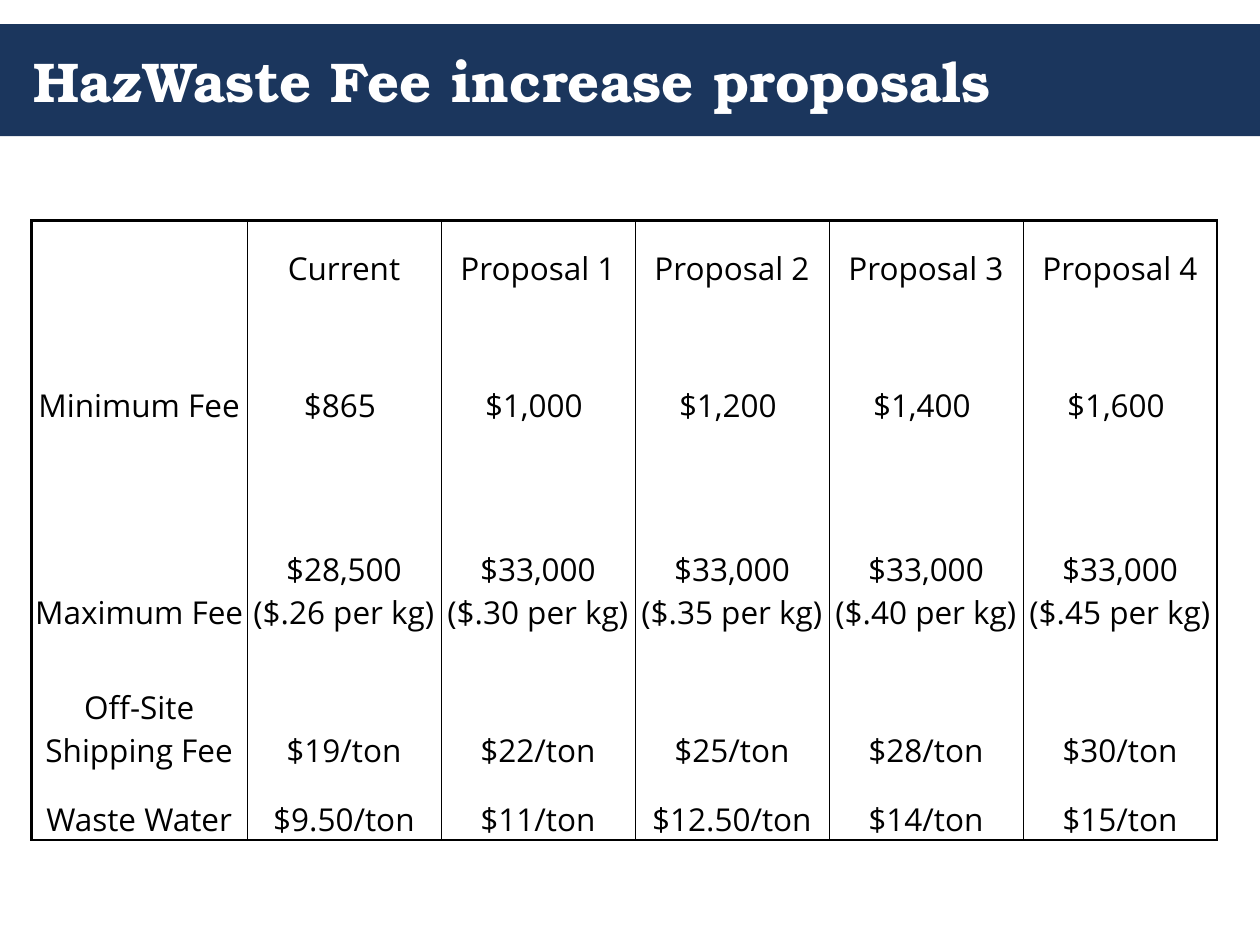
from lxml import etree
from pptx import Presentation
from pptx import util as u
from pptx.dml.color import RGBColor
from pptx.enum import shapes, text
from pptx.oxml import ns

NAVY, WHITE, BLACK = "1B365D", "FFFFFF", "000000"
HEADING_FONT, BODY_FONT = "TeX Gyre Bonum", "Open Sans"
OUTER, INNER = 1.5, 0.5
COLUMN_WIDTHS = [123.12] + [110.88] * 5
ROW_UNITS = [1, 2, 3, 2, 1]
FEES = [
    ["", "Current", "Proposal 1", "Proposal 2", "Proposal 3", "Proposal 4"],
    ["Minimum Fee", "$865 ", "$1,000 ", "$1,200 ", "$1,400 ", "$1,600 "],
    ["Maximum Fee", "$28,500 ($.26 per kg)", "$33,000 ($.30 per kg)",
     "$33,000 ($.35 per kg)", "$33,000 ($.40 per kg)", "$33,000 ($.45 per kg)"],
    ["Off-Site Shipping Fee", "$19/ton", "$22/ton", "$25/ton", "$28/ton", "$30/ton"],
    ["Waste Water", "$9.50/ton", "$11/ton", "$12.50/ton", "$14/ton", "$15/ton"],
]


def color(value):
    """Turn a hex string into a colour."""
    return RGBColor.from_string(value)


def write(frame, words, *, size, font, fill, bold=False, align=text.PP_ALIGN.LEFT):
    """Put one formatted paragraph into a text frame."""
    frame.word_wrap = True
    paragraph = frame.paragraphs[0]
    paragraph.alignment = align
    paragraph.font.size = u.Pt(size)
    run = paragraph.add_run()
    run.text = words
    run.font.size, run.font.name, run.font.bold = u.Pt(size), font, bold
    run.font.color.rgb = color(fill)


def set_borders(cell, widths):
    """Draw the cell's left, right, top and bottom edges; zero means none."""
    properties = cell._tc.get_or_add_tcPr()
    for place, (side, width) in enumerate(zip("LRTB", widths)):
        edge = etree.Element(ns.qn(f"a:ln{side}"), w=str(u.Pt(width)))
        if width:
            fill = etree.SubElement(edge, ns.qn("a:solidFill"))
            etree.SubElement(fill, ns.qn("a:srgbClr"), val=BLACK)
        else:
            etree.SubElement(edge, ns.qn("a:noFill"))
        properties.insert(place, edge)


def add_header(slide, left, top, width, height):
    """Add the navy band and the heading on it."""
    band = slide.shapes.add_shape(
        shapes.MSO_SHAPE.RECTANGLE, u.Pt(left), u.Pt(top), u.Pt(width), u.Pt(height))
    band.shadow.inherit = False
    band.fill.solid()
    band.fill.fore_color.rgb = color(NAVY)
    band.line.fill.background()
    heading = slide.shapes.add_textbox(
        u.Pt(left + 12), u.Pt(top), u.Pt(width - 24), u.Pt(height))
    heading.text_frame.vertical_anchor = text.MSO_ANCHOR.MIDDLE
    write(heading.text_frame, "HazWaste Fee increase proposals",
          size=32, font=HEADING_FONT, fill=WHITE, bold=True)


def add_fee_table(slide, left, top, height):
    """Add the fee table with a heavy frame and thin column rules."""
    fees = slide.shapes.add_table(
        len(FEES), len(COLUMN_WIDTHS), u.Pt(left), u.Pt(top),
        u.Pt(sum(COLUMN_WIDTHS)), u.Pt(height)).table
    fees.first_row = fees.horz_banding = False
    for column, width in zip(fees.columns, COLUMN_WIDTHS):
        column.width = u.Pt(width)
    last_row, last_column = len(FEES) - 1, len(COLUMN_WIDTHS) - 1
    for r, (units, entries) in enumerate(zip(ROW_UNITS, FEES)):
        fees.rows[r].height = u.Pt(height * units / sum(ROW_UNITS))
        for c, entry in enumerate(entries):
            cell = fees.cell(r, c)
            cell.margin_left = cell.margin_right = 0
            cell.margin_top = cell.margin_bottom = 0
            cell.vertical_anchor = text.MSO_ANCHOR.BOTTOM
            cell.fill.background()
            set_borders(cell, [
                OUTER if c == 0 else INNER,
                OUTER if c == last_column else INNER,
                OUTER if r == 0 else 0,
                OUTER if r == last_row else 0,
            ])
            if entry:
                write(cell.text_frame, entry, size=18, font=BODY_FONT,
                      fill=BLACK, align=text.PP_ALIGN.CENTER)


def main():
    """Build and save the slide."""
    deck = Presentation()
    deck.slide_width, deck.slide_height = u.Pt(720), u.Pt(540)
    slide = deck.slides.add_slide(deck.slide_layouts[6])
    add_header(slide, 0, 13.8, 720, 64)
    add_fee_table(slide, 18, 126, 354.24)
    deck.save("out.pptx")


if __name__ == "__main__":
    main()
